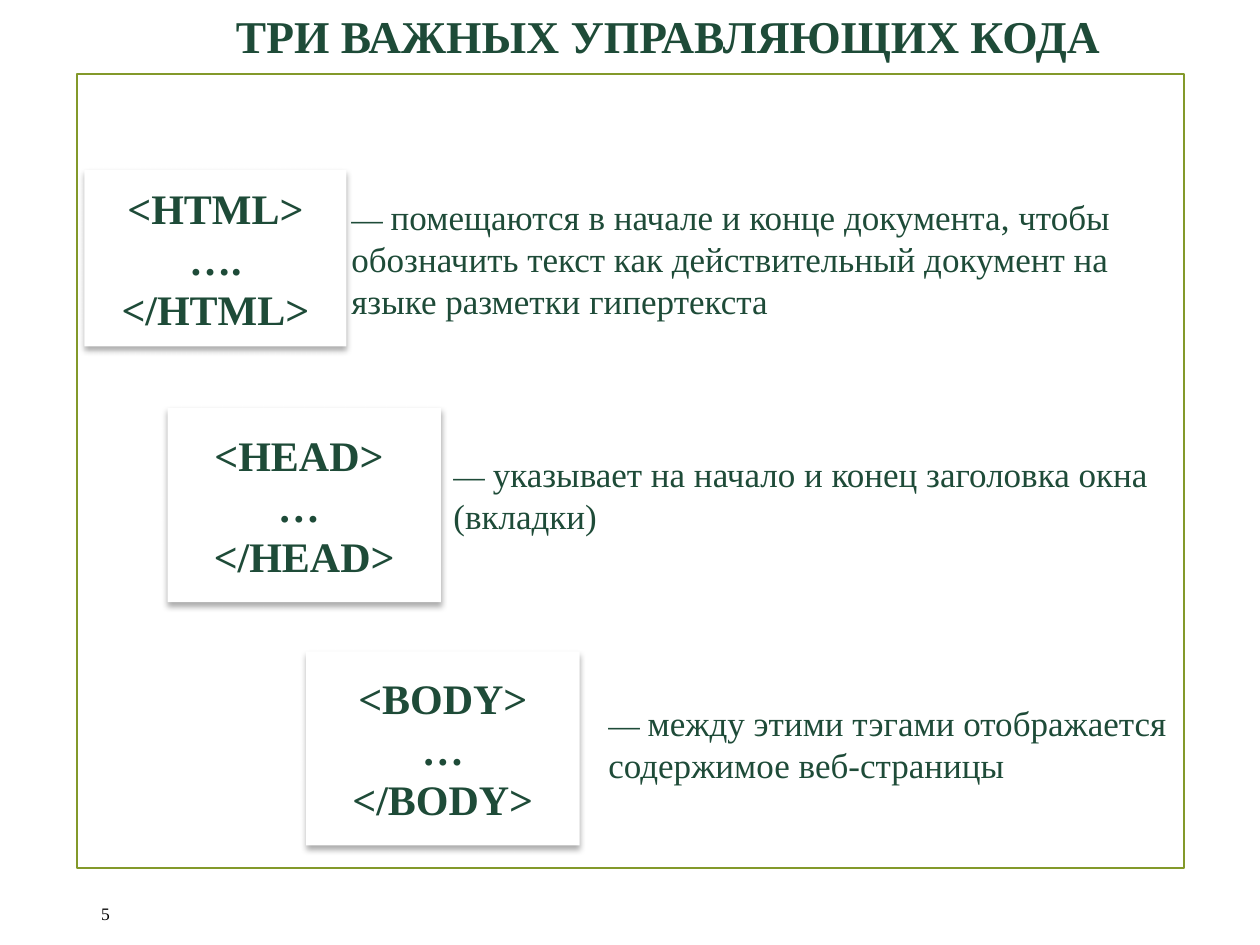
from lxml import etree
from pptx import Presentation
from pptx.dml.color import RGBColor
from pptx.enum.shapes import MSO_SHAPE
from pptx.enum.text import MSO_ANCHOR, MSO_AUTO_SIZE, PP_ALIGN
from pptx.oxml.ns import qn
from pptx.util import Inches, Pt

RECTANGLE = MSO_SHAPE.RECTANGLE
TOP, MIDDLE = MSO_ANCHOR.TOP, MSO_ANCHOR.MIDDLE
LEFT, CENTER, RIGHT = PP_ALIGN.LEFT, PP_ALIGN.CENTER, PP_ALIGN.RIGHT

THEME = {
    "font": "Times New Roman",
    "green": RGBColor(0x1E, 0x4B, 0x38),
    "olive": RGBColor(0x83, 0x99, 0x2A),
    "white": RGBColor(0xFF, 0xFF, 0xFF),
    "black": RGBColor(0, 0, 0),
    "title": 26,
    "tag": 24,
    "body": 20,
    "dash": 18,
    "number": 10,
    "frame_line": 1.25,
}

TITLE = "ТРИ ВАЖНЫХ УПРАВЛЯЮЩИХ КОДА"
TITLE_AREA = (0.91, 0.01, 8.79, 0.54)
FRAME_AREA = (0.61, 0.59, 8.79, 6.3)
NUMBER = "5"
NUMBER_AREA = (0.24, 7.05, 0.73, 0.4)
DASH = "— "
TAGS = [
    {
        "lines": ["<HTML>", "….", "</HTML>"],
        "card": (0.67, 1.35, 2.08, 1.4),
        "note": "помещаются в начале и конце документа, чтобы обозначить "
                "текст как действительный документ на языке разметки гипертекста",
        "note_area": (2.69, 1.5, 6.75, 1.11),
    },
    {
        "lines": ["<HEAD> ", "… ", "</HEAD>"],
        "card": (1.33, 3.24, 2.17, 1.54),
        "note": "указывает на начало и конец заголовка окна (вкладки)",
        "note_area": (3.5, 3.54, 5.85, 0.77),
    },
    {
        "lines": ["<BODY>", "…", "</BODY>"],
        "card": (2.43, 5.17, 2.17, 1.54),
        "note": "между этими тэгами отображается содержимое веб-страницы",
        "note_area": (4.73, 5.52, 5.14, 0.77),
    },
]


def to_inches(area):
    return [Inches(value) for value in area]


def write(shape, paragraphs, alignment, anchor=TOP, bold=False, color=THEME["green"]):
    frame = shape.text_frame
    frame.word_wrap = True
    frame.auto_size = MSO_AUTO_SIZE.NONE
    frame.vertical_anchor = anchor
    for index, runs in enumerate(paragraphs):
        paragraph = frame.add_paragraph() if index else frame.paragraphs[0]
        paragraph.alignment = alignment
        for text, size in runs:
            run = paragraph.add_run()
            run.text = text
            run.font.name = THEME["font"]
            run.font.size = Pt(size)
            run.font.bold = bold
            run.font.color.rgb = color


def add_rectangle(slide, area):
    shape = slide.shapes.add_shape(RECTANGLE, *to_inches(area))
    shape.shadow.inherit = False
    return shape


def add_frame(slide):
    frame = add_rectangle(slide, FRAME_AREA)
    frame.fill.background()
    frame.line.color.rgb = THEME["olive"]
    frame.line.width = Pt(THEME["frame_line"])


def add_soft_shadow(shape):
    effects = shape._element.spPr.find(qn("a:effectLst"))
    shadow = etree.SubElement(
        effects, qn("a:outerShdw"), blurRad=str(Pt(3.5)), dist=str(Pt(2.2)),
        dir="5400000", rotWithShape="0")
    color = etree.SubElement(shadow, qn("a:srgbClr"), val=str(THEME["black"]))
    etree.SubElement(color, qn("a:alpha"), val="32000")


def add_card(slide, area, lines):
    card = add_rectangle(slide, area)
    card.fill.solid()
    card.fill.fore_color.rgb = THEME["white"]
    card.line.fill.background()
    add_soft_shadow(card)
    write(card, [[(line, THEME["tag"])] for line in lines], CENTER, MIDDLE, bold=True)


def add_title(slide):
    title = slide.shapes.title
    title.left, title.top, title.width, title.height = to_inches(TITLE_AREA)
    write(title, [[(TITLE, THEME["title"])]], CENTER, bold=True)


def main():
    presentation = Presentation()
    presentation.slide_width, presentation.slide_height = Inches(10), Inches(7.5)
    slide = presentation.slides.add_slide(presentation.slide_layouts[5])

    add_frame(slide)
    add_title(slide)
    number = slide.shapes.add_textbox(*to_inches(NUMBER_AREA))
    write(number, [[(NUMBER, THEME["number"])]], RIGHT, MIDDLE, color=THEME["black"])
    for tag in TAGS:
        add_card(slide, tag["card"], tag["lines"])
    for tag in TAGS:
        note = slide.shapes.add_textbox(*to_inches(tag["note_area"]))
        write(note, [[(DASH, THEME["dash"]), (tag["note"], THEME["body"])]], LEFT)

    presentation.save("out.pptx")


if __name__ == "__main__":
    main()
